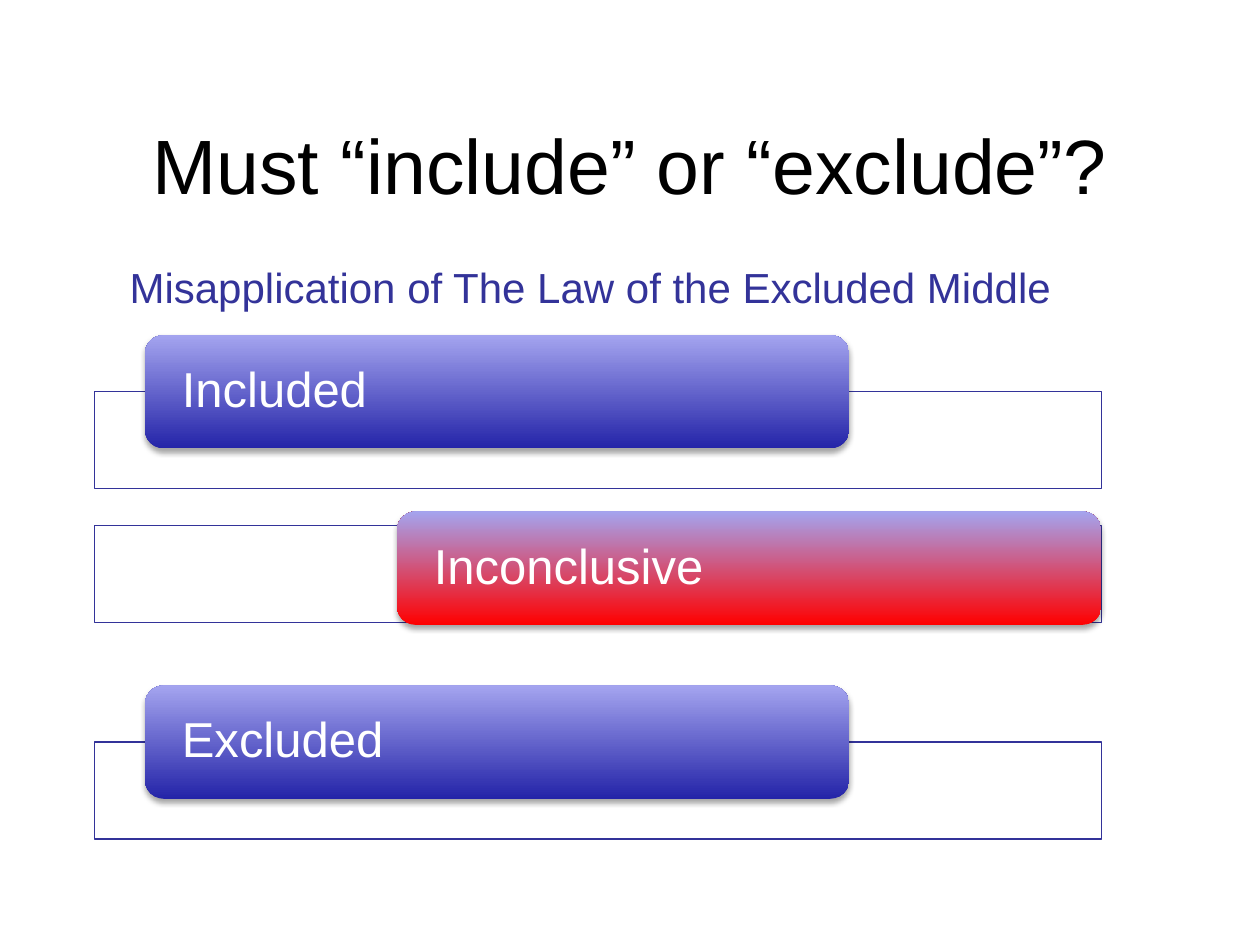
from dataclasses import dataclass

from lxml import etree
from pptx import Presentation
from pptx.dml.color import RGBColor
from pptx.enum.shapes import MSO_SHAPE
from pptx.enum.text import MSO_ANCHOR, PP_ALIGN
from pptx.oxml.ns import qn
from pptx.slide import Slide
from pptx.util import Inches, Pt

RECTANGLE = MSO_SHAPE.RECTANGLE
ROUNDED = MSO_SHAPE.ROUNDED_RECTANGLE
MIDDLE, TOP = MSO_ANCHOR.MIDDLE, MSO_ANCHOR.TOP
LEFT, CENTER = PP_ALIGN.LEFT, PP_ALIGN.CENTER

FONT = "Arial"
COLORS = {
    "white": "FFFFFF",
    "black": "000000",
    "navy": "333399",
    "blue": "2424A8",
    "red": "FF0000",
    "light": "A4A4EF",
}

PANEL_LEFT, PANEL_WIDTH, PANEL_HEIGHT = 0.75, 7.99, 0.77
LABEL_WIDTH, LABEL_HEIGHT = 5.59, 0.9


@dataclass
class Row:
    text: str
    panel_top: float
    label_left: float
    label_top: float
    color: str


ROWS = [
    Row("Included", 3.11, 1.15, 2.66, "blue"),
    Row("Inconclusive", 4.17, 3.15, 4.06, "red"),
    Row("Excluded", 5.89, 1.15, 5.44, "blue"),
]


def rgb(name: str) -> RGBColor:
    return RGBColor.from_string(COLORS[name])


def write(frame, text: str, size: float, color: str, align=LEFT, anchor=MIDDLE):
    """Put one styled run into a text frame and return its paragraph."""
    frame.word_wrap = True
    frame.vertical_anchor = anchor
    paragraph = frame.paragraphs[0]
    paragraph.alignment = align
    run = paragraph.add_run()
    run.text = text
    run.font.name = FONT
    run.font.size = Pt(size)
    run.font.color.rgb = rgb(color)
    return paragraph


def add_text(slide: Slide, box: tuple, text: str, size: float, color: str,
             align=LEFT, anchor=TOP) -> None:
    shape = slide.shapes.add_textbox(*map(Inches, box))
    write(shape.text_frame, text, size, color, align, anchor)


def add_alpha(color_element, percent: int) -> None:
    alpha = etree.SubElement(color_element, qn("a:alpha"))
    alpha.set("val", str(percent * 1000))


def add_shadow(shape) -> None:
    """Give the shape a soft shadow straight below it."""
    effects = shape._element.spPr.find(qn("a:effectLst"))
    shadow = etree.SubElement(effects, qn("a:outerShdw"))
    shadow.set("blurRad", str(Pt(3.1)))
    shadow.set("dist", str(Pt(1.8)))
    shadow.set("dir", "5400000")
    shadow.set("rotWithShape", "0")
    color = etree.SubElement(shadow, qn("a:srgbClr"))
    color.set("val", COLORS["black"])
    add_alpha(color, 35)


def add_panel(slide: Slide, top: float) -> None:
    shape = slide.shapes.add_shape(
        RECTANGLE, Inches(PANEL_LEFT), Inches(top),
        Inches(PANEL_WIDTH), Inches(PANEL_HEIGHT))
    shape.shadow.inherit = False
    shape.fill.solid()
    shape.fill.fore_color.rgb = rgb("white")
    add_alpha(shape._element.spPr.find(".//" + qn("a:srgbClr")), 90)
    shape.line.color.rgb = rgb("navy")
    shape.line.width = Pt(0.75)


def add_label(slide: Slide, row: Row) -> None:
    shape = slide.shapes.add_shape(
        ROUNDED, Inches(row.label_left), Inches(row.label_top),
        Inches(LABEL_WIDTH), Inches(LABEL_HEIGHT))
    shape.shadow.inherit = False
    shape.line.fill.background()
    shape.fill.gradient()
    shape.fill.gradient_angle = 90
    for stop, color, position in zip(
            shape.fill.gradient_stops, (row.color, "light"), (0, 1)):
        stop.color.rgb = rgb(color)
        stop.position = position
    add_shadow(shape)
    frame = shape.text_frame
    frame.margin_left = frame.margin_right = Inches(0.25)
    frame.margin_top = frame.margin_bottom = 0
    write(frame, row.text, 28, "white").line_spacing = 0.9


def main() -> None:
    presentation = Presentation()
    presentation.slide_width = Inches(10)
    presentation.slide_height = Inches(7.5)
    slide = presentation.slides.add_slide(presentation.slide_layouts[6])

    # Title
    add_text(slide, (0.75, 0.67, 8.5, 1.25), "Must “include” or “exclude”?",
             44, "black", CENTER, MIDDLE)

    # Outlined panels with their labels
    for row in ROWS:
        add_panel(slide, row.panel_top)
        add_label(slide, row)

    # Subtitle
    add_text(slide, (0.93, 2.03, 7.64, 0.5),
             "Misapplication of The Law of the Excluded Middle", 24, "navy")

    presentation.save("out.pptx")


if __name__ == "__main__":
    main()
